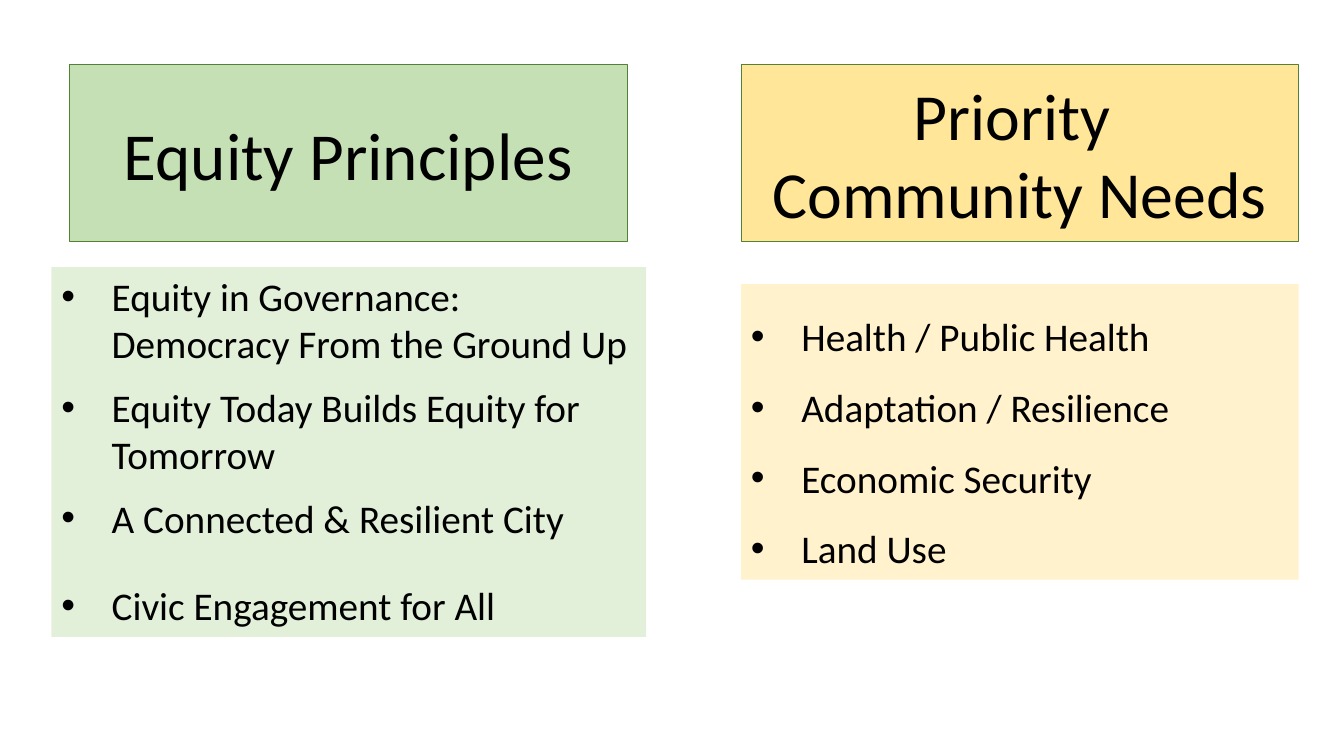
from pptx import Presentation
from pptx.dml.color import RGBColor
from pptx.enum import shapes, text
from pptx.oxml.ns import qn
from pptx.util import Inches, Pt
from lxml import etree

BLACK = RGBColor(0x00, 0x00, 0x00)
BORDER = RGBColor(0x54, 0x82, 0x35)
GREEN = RGBColor(0xC5, 0xE0, 0xB4)
PALE_GREEN = RGBColor(0xE2, 0xF0, 0xD9)
GOLD = RGBColor(0xFF, 0xE6, 0x99)
PALE_GOLD = RGBColor(0xFF, 0xF2, 0xCC)

PRINCIPLES = [
    "Equity in Governance: Democracy From the Ground Up",
    "Equity Today Builds Equity for Tomorrow",
    "A Connected & Resilient City",
    "Civic Engagement for All",
]
NEEDS = [
    "Health / Public Health",
    "Adaptation / Resilience",
    "Economic Security",
    "Land Use",
]


def add_box(slide, box, fill):
    sp = slide.shapes.add_shape(
        shapes.MSO_SHAPE.RECTANGLE, *[Inches(n) for n in box])
    sp.shadow.inherit = False
    sp.fill.solid()
    sp.fill.fore_color.rgb = fill
    sp.line.fill.background()
    sp.text_frame.word_wrap = True
    return sp


def add_line(tf, i, line, size, align):
    p = tf.paragraphs[0] if i == 0 else tf.add_paragraph()
    p.text = line
    p.alignment = align
    p.font.name = "Calibri"
    p.font.size = Pt(size)
    p.font.color.rgb = BLACK
    return p


def add_heading(slide, box, lines, size, fill):
    sp = add_box(slide, box, fill)
    sp.line.color.rgb = BORDER
    sp.line.width = Pt(0.75)
    tf = sp.text_frame
    tf.vertical_anchor = text.MSO_ANCHOR.MIDDLE
    tf.margin_left = tf.margin_right = Inches(0.04)
    tf.margin_top = tf.margin_bottom = Inches(0.04)
    for i, line in enumerate(lines):
        add_line(tf, i, line, size, text.PP_ALIGN.CENTER)


def add_bullets(slide, box, items, fill, tight=0):
    tf = add_box(slide, box, fill).text_frame
    tf.vertical_anchor = text.MSO_ANCHOR.TOP
    tf.auto_size = text.MSO_AUTO_SIZE.SHAPE_TO_FIT_TEXT
    for i, item in enumerate(items):
        p = add_line(tf, i, item, 28, text.PP_ALIGN.LEFT)
        if i < tight:
            p.space_after = Pt(12)
        else:
            p.line_spacing = 1.5
        pPr = p._p.get_or_add_pPr()
        pPr.set("marL", str(Inches(0.5)))
        pPr.set("indent", str(-Inches(0.5)))
        font = etree.Element(qn("a:buFont"), typeface="Arial")
        bullet = etree.Element(qn("a:buChar"), char="•")
        defaults = pPr.find(qn("a:defRPr"))
        defaults.addprevious(font)
        defaults.addprevious(bullet)


def main():
    prs = Presentation()
    prs.slide_width, prs.slide_height = Inches(13.33), Inches(7.5)
    slide = prs.slides.add_slide(prs.slide_layouts[6])
    add_heading(slide, (0.69, 0.64, 5.53, 1.76), ["Equity Principles"], 48, GREEN)
    add_bullets(slide, (0.51, 2.65, 5.9, 3.67), PRINCIPLES, PALE_GREEN, tight=3)
    add_heading(slide, (7.35, 0.64, 5.53, 1.76),
                ["Priority ", "Community Needs"], 47, GOLD)
    add_bullets(slide, (7.35, 2.82, 5.53, 2.93), NEEDS, PALE_GOLD)
    prs.save("out.pptx")


if __name__ == "__main__":
    main()
